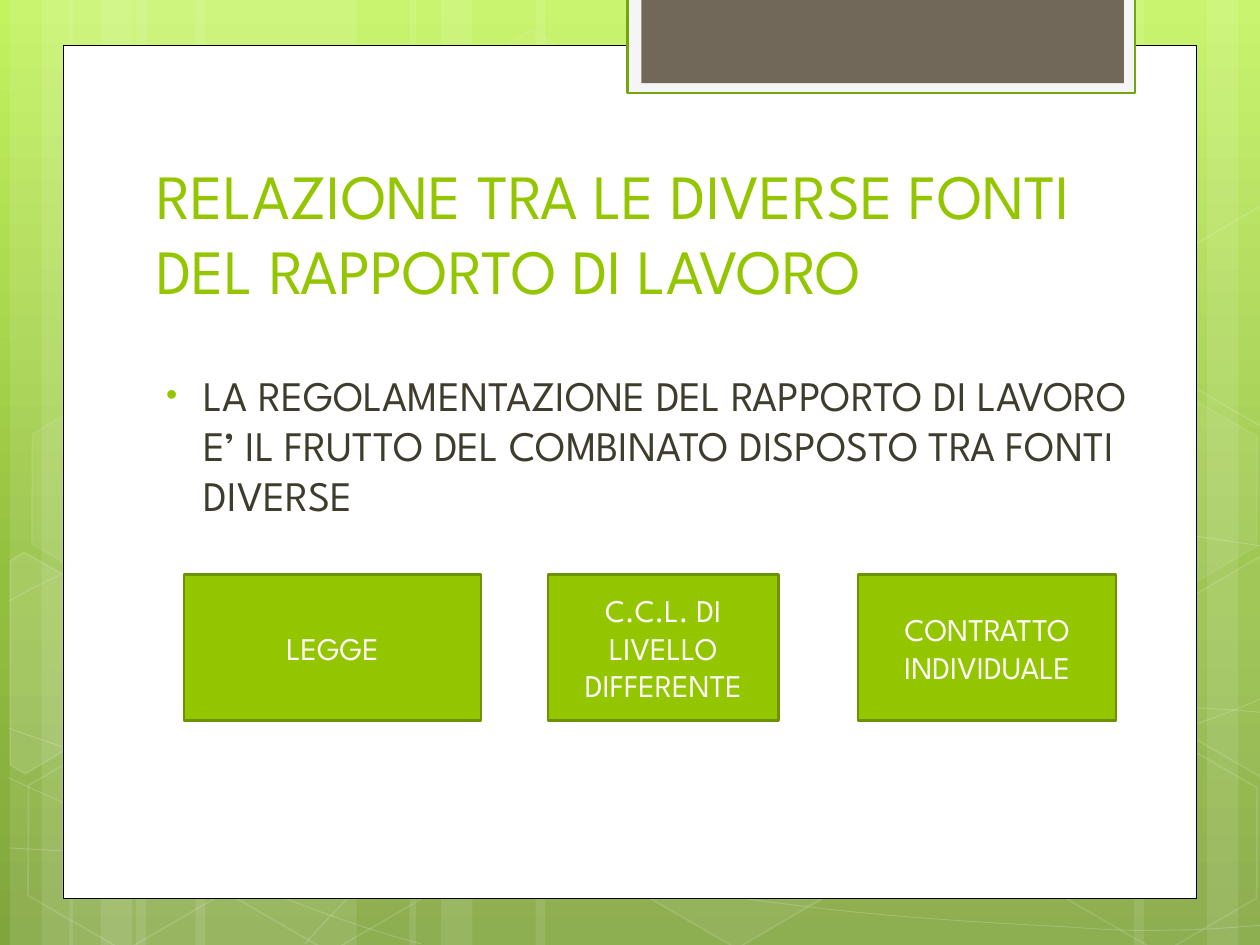
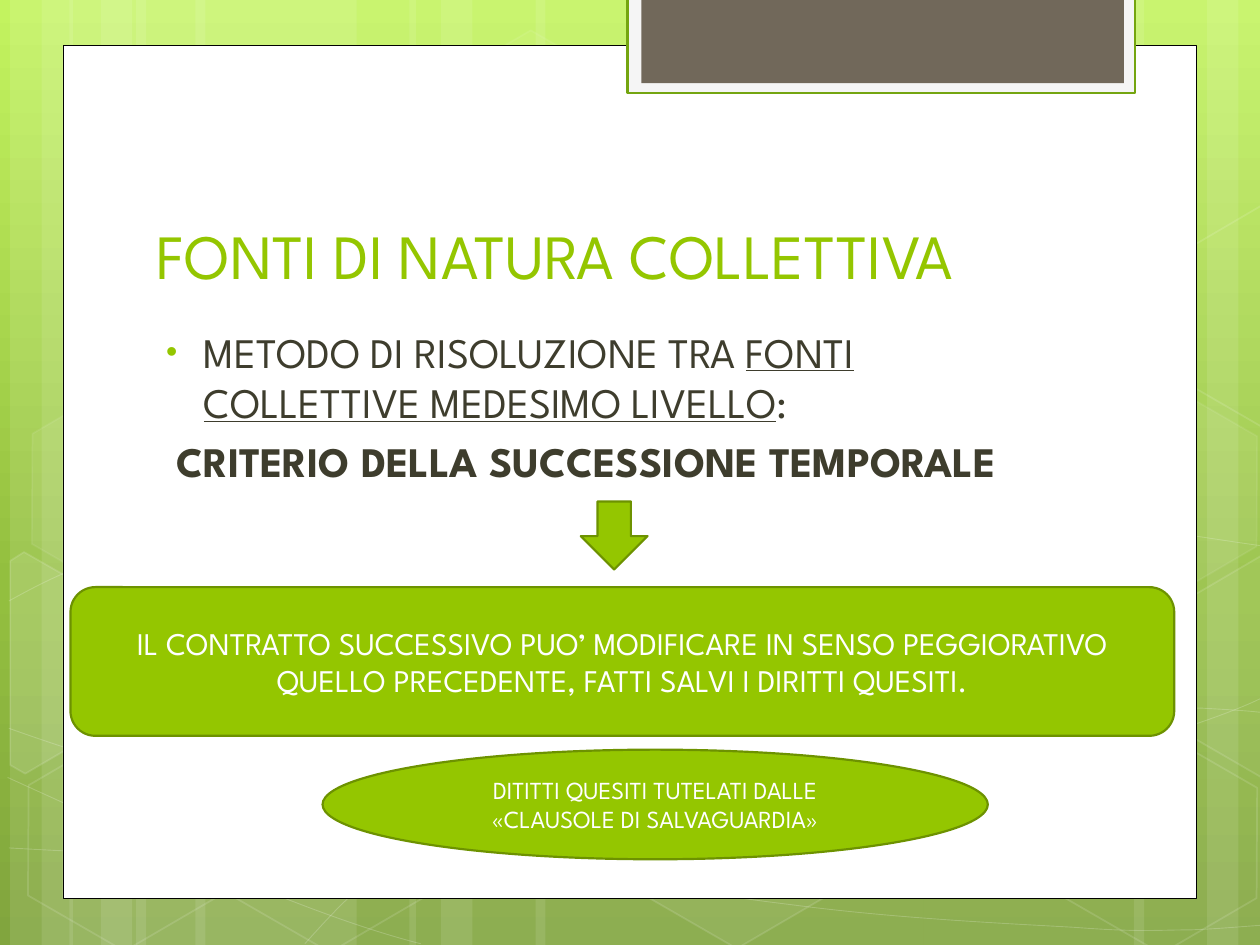
from copy import deepcopy
from math import cos, radians, sin

from lxml.etree import SubElement
from pptx import Presentation
from pptx.dml.color import RGBColor
from pptx.enum.shapes import MSO_SHAPE as Preset
from pptx.enum.text import MSO_ANCHOR as Anchor, MSO_AUTO_SIZE as AutoSize, PP_ALIGN as Align
from pptx.oxml.ns import qn
from pptx.util import Inches, Pt

FONT = "League Spartan"
WHITE = RGBColor(0xFF, 0xFF, 0xFF)
BLACK = RGBColor(0x00, 0x00, 0x00)
LIME = RGBColor(0x94, 0xC6, 0x00)
DARK_LIME = RGBColor(0x6D, 0x92, 0x00)
TAB_EDGE = RGBColor(0x74, 0xA5, 0x10)
TAB_RIM = RGBColor(0xF5, 0xF5, 0xF5)
TAUPE = RGBColor(0x71, 0x68, 0x5A)
INK = RGBColor(0x3E, 0x3D, 0x2D)
BACKDROP = [(0, RGBColor(0xC3, 0xF3, 0x5F)), (0.62, RGBColor(0x93, 0xBF, 0x3F)),
            (1, RGBColor(0x81, 0xA5, 0x3E))]
TEXT_LEFT = 1.14
TILT = 30


def paint(shape, fill=None, line=None, width=1.25, fill_alpha=100, line_alpha=100):
    """Set fill and outline; None means absent, alphas are opacity percentages."""
    shape.shadow.inherit = False
    for part, color, alpha, tag in ((shape.fill, fill, fill_alpha, "a:solidFill"),
                                    (shape.line.fill, line, line_alpha, "a:ln/a:solidFill")):
        if color is None:
            part.background()
            continue
        part.solid()
        part.fore_color.rgb = color
        if alpha < 100:
            tags = "/".join(qn(name) for name in tag.split("/"))
            SubElement(shape.element.spPr.find(tags)[0], qn("a:alpha"), val=str(alpha * 1000))
    if line is not None:
        shape.line.width = Pt(width)


def outline(shapes, points, close):
    """Draw a freeform through points given in inches."""
    mils = [(x * 1000, y * 1000) for x, y in points]
    builder = shapes.build_freeform(*mils[0], scale=914.4)
    builder.add_line_segments(mils[1:], close=close)
    return builder.convert_to_shape()


deck = Presentation()
deck.slide_width, deck.slide_height = Inches(10), Inches(7.5)
layout = deck.slide_layouts[5]
for placeholder in list(layout.placeholders):
    if placeholder.placeholder_format.idx != 0:
        layout.shapes.element.remove(placeholder.element)

# Shared background gradient
backdrop = layout.background.fill
backdrop.gradient()
backdrop.gradient_angle = 270
stop_list = layout.element.find(".//" + qn("a:gsLst"))
stop_list.append(deepcopy(stop_list[-1]))
for stop, (position, color) in zip(backdrop.gradient_stops, BACKDROP):
    stop.position = position
    stop.color.rgb = color

sources_slide = deck.slides.add_slide(layout)
collective_slide = deck.slides.add_slide(layout)
decor = sources_slide.shapes

# Translucent vertical bands: left, width
for left, width in [(1.08, 1.75), (0.08, 0.5), (0.33, 0.83), (1.55, 1.75), (0.55, 0.5),
                    (0.8, 0.83), (7.33, 1.75), (9.58, 0.5), (9, 0.83), (4.25, 3.08),
                    (3.25, 0.5), (3.5, 0.83)]:
    band = decor.add_shape(Preset.RECTANGLE, Inches(left), 0, Inches(width), deck.slide_height)
    paint(band, WHITE, fill_alpha=10)

# Fine curves: a start, then spans of two controls and an end, or of an end alone
CURVES = [
    [[(0.07, 6.73)], [(0.61, 6.76), (1.15, 6.79), (1.9, 6.78)],
     [(2.65, 6.77), (3.58, 6.75), (4.58, 6.65)], [(5.58, 6.55), (7, 6.36), (7.92, 6.17)],
     [(8.83, 5.98), (9.77, 5.68), (10.07, 5.51)]],
    [[(0.07, 4.77)], [(0.36, 4.61), (0.65, 4.46), (1.21, 4.31)],
     [(1.78, 4.16), (2.59, 3.94), (3.47, 3.87)], [(4.36, 3.8), (5.44, 3.79), (6.54, 3.87)],
     [(7.64, 3.95), (9.47, 4.26), (10.07, 4.34)]],
    [[(0.06, 6.17)], [(1.27, 6.72), (2.47, 7.27), (3.34, 7.49)]],
    [[(0.07, 5.78)], [(0.38, 5.89), (0.7, 6), (1.28, 6.16)],
     [(1.86, 6.31), (2.73, 6.56), (3.57, 6.73)], [(4.4, 6.9), (5.45, 7.08), (6.28, 7.18)],
     [(7.11, 7.29), (8, 7.33), (8.53, 7.36)], [(9.05, 7.4), (9.19, 7.38), (9.45, 7.38)],
     [(9.71, 7.37), (9.89, 7.35), (10.07, 7.34)]],
    [[(2.42, 7.49)], [(2.6, 7.29), (2.78, 7.09), (3.02, 6.91)],
     [(3.26, 6.73), (3.6, 6.53), (3.88, 6.39)], [(4.16, 6.25), (4.33, 6.19), (4.7, 6.09)],
     [(5.06, 5.99), (5.73, 5.85), (6.08, 5.78)], [(6.44, 5.71), (6.49, 5.71), (6.8, 5.69)],
     [(7.11, 5.66), (7.6, 5.63), (7.94, 5.62)], [(8.29, 5.61), (8.86, 5.62), (8.86, 5.62)],
     [(9.53, 5.62)], [(9.71, 5.63), (9.88, 5.64), (9.97, 5.65)],
     [(10.06, 5.66), (10.03, 5.65), (10.06, 5.66)]],
]
for spans in CURVES:
    curve = outline(decor, [point for span in spans for point in span], False)
    segments = iter(curve.element.findall(".//" + qn("a:lnTo")))
    for span in spans[1:]:
        parts = [next(segments) for _ in span]
        if len(parts) == 3:
            bezier = parts[0]
            bezier.tag = qn("a:cubicBezTo")
            for extra in parts[1:]:
                bezier.append(extra[0])
                extra.getparent().remove(extra)
    paint(curve, None, WHITE, 0.5, line_alpha=20)

# Hexagons: left, top, fill opacity, line opacity
for left, top, fill_alpha, line_alpha in [
        (3.34, 0.36, 4, 8), (4.97, 5.89, 6, 12), (0.11, 5.91, 0, 12), (0.14, 3.12, 7, 8),
        (1.74, 5.92, 0, 12), (7.53, 4.53, 10, 12), (8.34, 5.93, 0, 12), (8.34, 3.14, 7, 8)]:
    hexagon = decor.add_shape(Preset.HEXAGON, Inches(left), Inches(top),
                              Inches(1.75), Inches(1.52))
    hexagon.adjustments[0] = 0.285
    hexagon.rotation = TILT
    paint(hexagon, WHITE if fill_alpha else None, WHITE, 1, fill_alpha, line_alpha)

# Hexagons cut off by the slide edge: fill opacity, centre, corners as they show once tilted
cosine, sine = cos(radians(TILT)), sin(radians(TILT))
for fill_alpha, (center_x, center_y), corners in [
        (10, (0.36, 5.35), [(0.08, 4.45), (0.19, 4.38), (0.96, 4.82), (0.95, 5.7),
                            (0.2, 6.14), (0.08, 6.07)]),
        (4, (9.85, 5.2), [(9.26, 4.85), (10.01, 4.41), (10.09, 4.46), (10.09, 6.13),
                          (10.02, 6.17), (9.26, 5.73)]),
        (0, (9.85, 2.41), [(9.26, 2.07), (10.01, 1.63), (10.1, 1.68), (10.09, 3.35),
                           (10.02, 3.39), (9.26, 2.95)])]:
    offsets = [(x - center_x, y - center_y) for x, y in corners]
    upright = [(center_x + dx * cosine + dy * sine, center_y - dx * sine + dy * cosine)
               for dx, dy in offsets]
    cut_hexagon = outline(decor, upright, True)
    cut_hexagon.rotation = TILT
    paint(cut_hexagon, WHITE if fill_alpha else None, WHITE, 1, fill_alpha, 12)

# White page and the tab at its top
for box, fill, line, width in [((0.5, 0.36, 9, 6.77), WHITE, BLACK, 0.5),
                               ((4.98, -0.02, 4.03, 0.76), TAB_RIM, TAB_EDGE, 1.25),
                               ((5.09, -0.02, 3.83, 0.68), TAUPE, None, 0)]:
    paint(decor.add_shape(Preset.RECTANGLE, *map(Inches, box)), fill, line, width)

# The decoration belongs to the layout, so both slides show it
for shape in list(decor):
    if not shape.is_placeholder:
        layout.shapes.element.append(shape.element)

# Titles and body text; a body paragraph is (bulleted, [(text, underline, bold)])
for slide, title_text, title_top, title_height, body_box, paragraphs in [
        (sources_slide, "RELAZIONE TRA LE DIVERSE FONTI DEL RAPPORTO DI LAVORO", 0.52, 1.97,
         (TEXT_LEFT, 2.88, 8.03, 3.49),
         [(True, [("LA REGOLAMENTAZIONE DEL RAPPORTO DI LAVORO E’ IL FRUTTO DEL COMBINATO "
                   "DISPOSTO TRA FONTI DIVERSE", False, False)])]),
        (collective_slide, "FONTI DI NATURA COLLETTIVA", 1.12, 1.25,
         (TEXT_LEFT, 2.54, 7.41, 4.36),
         [(True, [("METODO DI RISOLUZIONE TRA ", False, False),
                  ("FONTI COLLETTIVE MEDESIMO LIVELLO", True, False), (":", False, False)]),
          (False, [("CRITERIO DELLA SUCCESSIONE TEMPORALE", False, True)])])]:
    title = slide.shapes.title
    title.left, title.top = Inches(TEXT_LEFT), Inches(title_top)
    title.width, title.height = Inches(7.68), Inches(title_height)
    title.text_frame.text = title_text
    title.text_frame.word_wrap = True
    title.text_frame.auto_size = AutoSize.NONE
    title.text_frame.vertical_anchor = Anchor.BOTTOM
    heading = title.text_frame.paragraphs[0]
    heading.alignment = Align.LEFT
    heading.font.name, heading.font.size = FONT, Pt(36)
    heading.font.color.rgb = LIME

    body = slide.shapes.add_textbox(*map(Inches, body_box)).text_frame
    body.word_wrap = True
    for index, (bulleted, runs) in enumerate(paragraphs):
        paragraph = body.add_paragraph() if index else body.paragraphs[0]
        paragraph.space_before = Pt(4.8)
        for text, underline, bold in runs:
            run = paragraph.add_run()
            run.text = text
            run.font.name, run.font.size = FONT, Pt(24)
            run.font.color.rgb = INK
            run.font.underline, run.font.bold = underline, bold
        properties = paragraph._p.get_or_add_pPr()
        properties.set("marL", str(Inches(0.38 if bulleted else 0.16)))
        properties.set("indent", str(Inches(-0.3 if bulleted else 0)))
        if bulleted:
            bullet_color = SubElement(properties, qn("a:buClr"))
            SubElement(bullet_color, qn("a:srgbClr"), val=str(LIME))
            SubElement(properties, qn("a:buSzPct"), val="76000")
            SubElement(properties, qn("a:buFont"), typeface="Arial")
            SubElement(properties, qn("a:buChar"), char="•")

# Green shapes
SOURCE_TOP, SOURCE_HEIGHT = 4.56, 1.16
for slide, preset, box, text, size in [
        (sources_slide, Preset.RECTANGLE, (1.46, SOURCE_TOP, 2.36, SOURCE_HEIGHT), "LEGGE", 18),
        (sources_slide, Preset.RECTANGLE, (4.35, SOURCE_TOP, 1.83, SOURCE_HEIGHT),
         "C.C.L. DI LIVELLO DIFFERENTE", 18),
        (sources_slide, Preset.RECTANGLE, (6.81, SOURCE_TOP, 2.05, SOURCE_HEIGHT),
         "CONTRATTO INDIVIDUALE", 18),
        (collective_slide, Preset.DOWN_ARROW, (4.61, 3.98, 0.53, 0.54), "", 18),
        (collective_slide, Preset.ROUNDED_RECTANGLE, (0.56, 4.66, 8.76, 1.18),
         "IL CONTRATTO SUCCESSIVO PUO’ MODIFICARE IN SENSO PEGGIORATIVO QUELLO PRECEDENTE, "
         "FATTI SALVI I DIRITTI QUESITI.", 18),
        (collective_slide, Preset.OVAL, (2.56, 5.95, 5.28, 0.87),
         "DITITTI QUESITI TUTELATI DALLE «CLAUSOLE DI SALVAGUARDIA»", 14)]:
    shape = slide.shapes.add_shape(preset, *map(Inches, box))
    paint(shape, LIME, DARK_LIME)
    if text:
        shape.text_frame.text = text
        shape.text_frame.word_wrap = True
        shape.text_frame.vertical_anchor = Anchor.MIDDLE
        label = shape.text_frame.paragraphs[0]
        label.alignment = Align.CENTER
        label.font.name, label.font.size = FONT, Pt(size)
        label.font.color.rgb = WHITE

deck.save("out.pptx")
